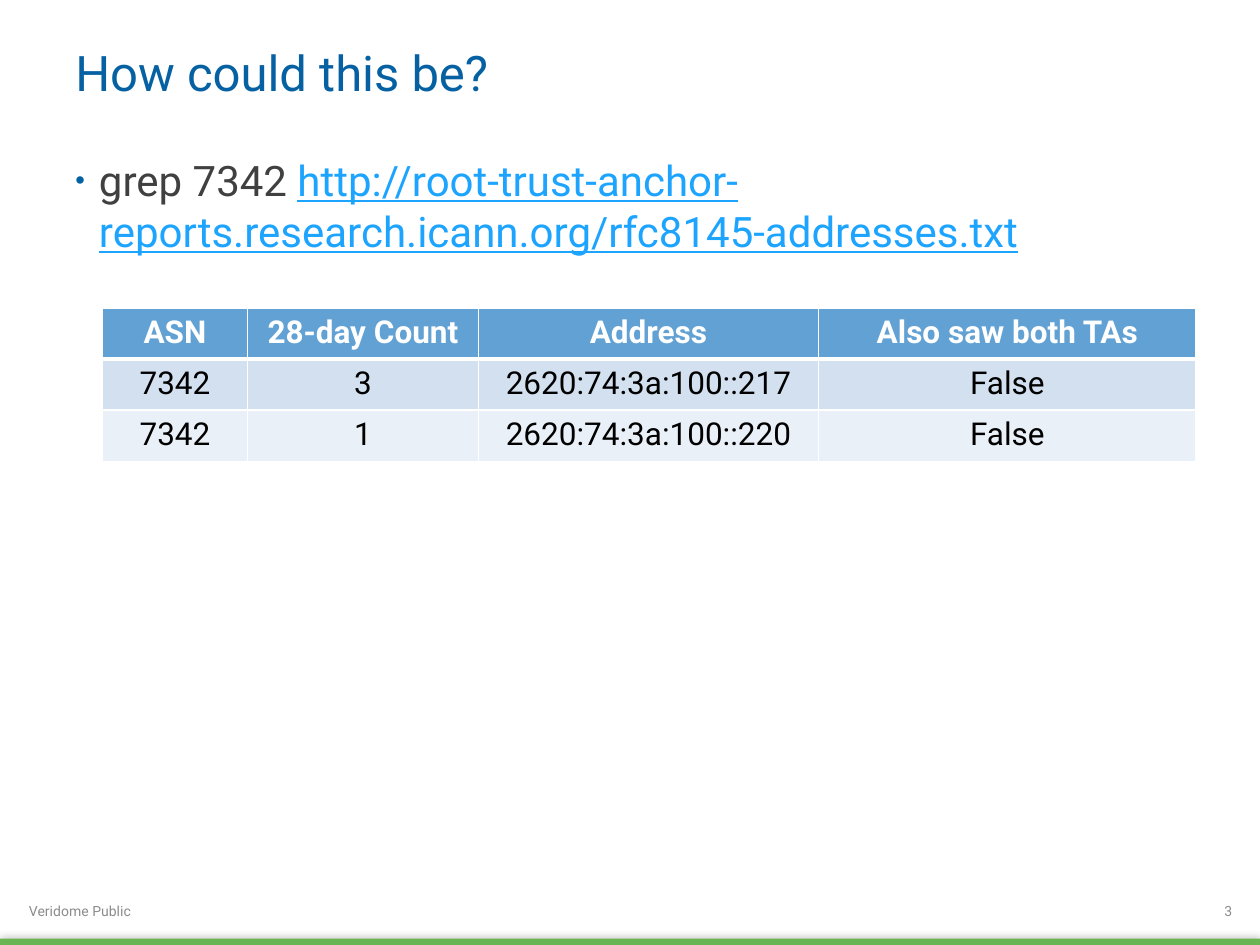
from dataclasses import dataclass

from lxml import etree
from pptx import Presentation
from pptx.dml.color import RGBColor
from pptx.enum.shapes import MSO_SHAPE
from pptx.enum.text import MSO_ANCHOR, PP_ALIGN
from pptx.oxml.ns import qn
from pptx.util import Pt

RECT = MSO_SHAPE.RECTANGLE
TOP, MIDDLE = MSO_ANCHOR.TOP, MSO_ANCHOR.MIDDLE
LEFT, CENTER, RIGHT = PP_ALIGN.LEFT, PP_ALIGN.CENTER, PP_ALIGN.RIGHT


@dataclass(frozen=True)
class Theme:
    font: str = "Roboto"
    title: str = "0661A3"
    bullet: str = "0061A3"
    body: str = "404040"
    link: str = "1DA4FF"
    footer: str = "8C8C8C"
    bar: str = "69B453"
    header: str = "61A1D4"
    bands: tuple = ("D2E0EF", "EAF0F7")
    white: str = "FFFFFF"
    black: str = "000000"
    title_size: int = 28
    body_size: int = 24
    table_size: int = 18
    footer_size: int = 8


THEME = Theme()


def sub(parent, tag, **attrs):
    return etree.SubElement(parent, qn(tag), {k: str(v) for k, v in attrs.items()})


def add_run(p, text, *, size, color, bold=False, underline=None):
    r = p.add_run()
    r.text = text
    font = r.font
    font.name, font.size, font.bold = THEME.font, Pt(size), bold
    font.color.rgb = RGBColor.from_string(color)
    font.underline = underline


def add_text_box(slide, box, anchor=MIDDLE, align=LEFT):
    """Add an empty wrapped text box and return its first paragraph."""
    tf = slide.shapes.add_textbox(*map(Pt, box)).text_frame
    tf.word_wrap = True
    tf.vertical_anchor = anchor
    p = tf.paragraphs[0]
    p.alignment = align
    return p


def add_title(slide, box, text):
    p = add_text_box(slide, box)
    add_run(p, text, size=THEME.title_size, color=THEME.title)


def add_body(slide, box, command, url):
    p = add_text_box(slide, box, anchor=TOP)
    pPr = p._p.get_or_add_pPr()
    indent = Pt(13.5)
    pPr.set("marL", str(indent))
    pPr.set("indent", str(-indent))
    sub(sub(pPr, "a:buClr"), "a:srgbClr", val=THEME.bullet)
    sub(pPr, "a:buSzPct", val=65000)
    sub(pPr, "a:buFont", typeface="Arial")
    sub(pPr, "a:buChar", char="•")
    add_run(p, command, size=THEME.body_size, color=THEME.body)
    add_run(p, url, size=THEME.body_size, color=THEME.link, underline=True)


def set_borders(cell, bottom):
    tcPr = cell._tc.get_or_add_tcPr()
    widths = {"a:lnL": 1, "a:lnR": 1, "a:lnT": 1, "a:lnB": bottom}
    for i, (tag, width) in enumerate(widths.items()):
        ln = sub(tcPr, tag, w=Pt(width))
        sub(sub(ln, "a:solidFill"), "a:srgbClr", val=THEME.white)
        tcPr.insert(i, ln)  # borders come before the fill


def add_address_table(slide, box, widths, rows):
    table = slide.shapes.add_table(len(rows), len(widths), *map(Pt, box)).table
    for column, width in zip(table.columns, widths):
        column.width = Pt(width)
    for i, row in enumerate(rows):
        head = i == 0
        fill = THEME.header if head else THEME.bands[(i - 1) % 2]
        for j, text in enumerate(row):
            cell = table.cell(i, j)
            cell.fill.solid()
            cell.fill.fore_color.rgb = RGBColor.from_string(fill)
            set_borders(cell, bottom=3 if head else 1)
            p = cell.text_frame.paragraphs[0]
            p.alignment = CENTER
            add_run(p, text, size=THEME.table_size, bold=head,
                    color=THEME.white if head else THEME.black)


def add_footer(slide, box, label, number):
    left, top, width, height = box

    # Green bar with a soft shadow along the bottom edge
    bar_height = 3.6
    sp = slide.shapes.add_shape(RECT, Pt(left), Pt(top + height - bar_height),
                                Pt(width), Pt(bar_height))
    sp.fill.solid()
    sp.fill.fore_color.rgb = RGBColor.from_string(THEME.bar)
    sp.line.fill.background()
    sp.shadow.inherit = False
    effects = sp._element.spPr.find(qn("a:effectLst"))
    shadow = sub(effects, "a:outerShdw", blurRad=Pt(5), dist=0, dir=0, rotWithShape=0)
    sub(sub(shadow, "a:srgbClr", val=THEME.black), "a:alpha", val=40000)

    # Label on the left, page number on the right
    style = {"size": THEME.footer_size, "color": THEME.footer}
    p = add_text_box(slide, (left + 9.4, top, 239, 14.4))
    add_run(p, label, **style)
    p = add_text_box(slide, (left + width - 36.7, top, 28, 14.4), align=RIGHT)
    add_run(p, number, **style)


def main():
    prs = Presentation()
    prs.slide_width, prs.slide_height = Pt(720), Pt(540)
    slide = prs.slides.add_slide(prs.slide_layouts[6])

    add_footer(slide, (0, 513.4, 720, 26.6), "Veridome Public", "3")
    add_title(slide, (36, 19.4, 648, 44), "How could this be?")
    add_body(slide, (36, 85, 648, 414), "grep 7342 ",
             "http://root-trust-anchor-reports.research.icann.org/rfc8145-addresses.txt")
    add_address_table(slide, (58.6, 176, 625, 87.6), (82.8, 132, 194.4, 215.8), [
        ("ASN", "28-day Count", "Address", "Also saw both TAs"),
        ("7342", "3", "2620:74:3a:100::217", "False"),
        ("7342", "1", "2620:74:3a:100::220", "False"),
    ])
    prs.save("out.pptx")


if __name__ == "__main__":
    main()
